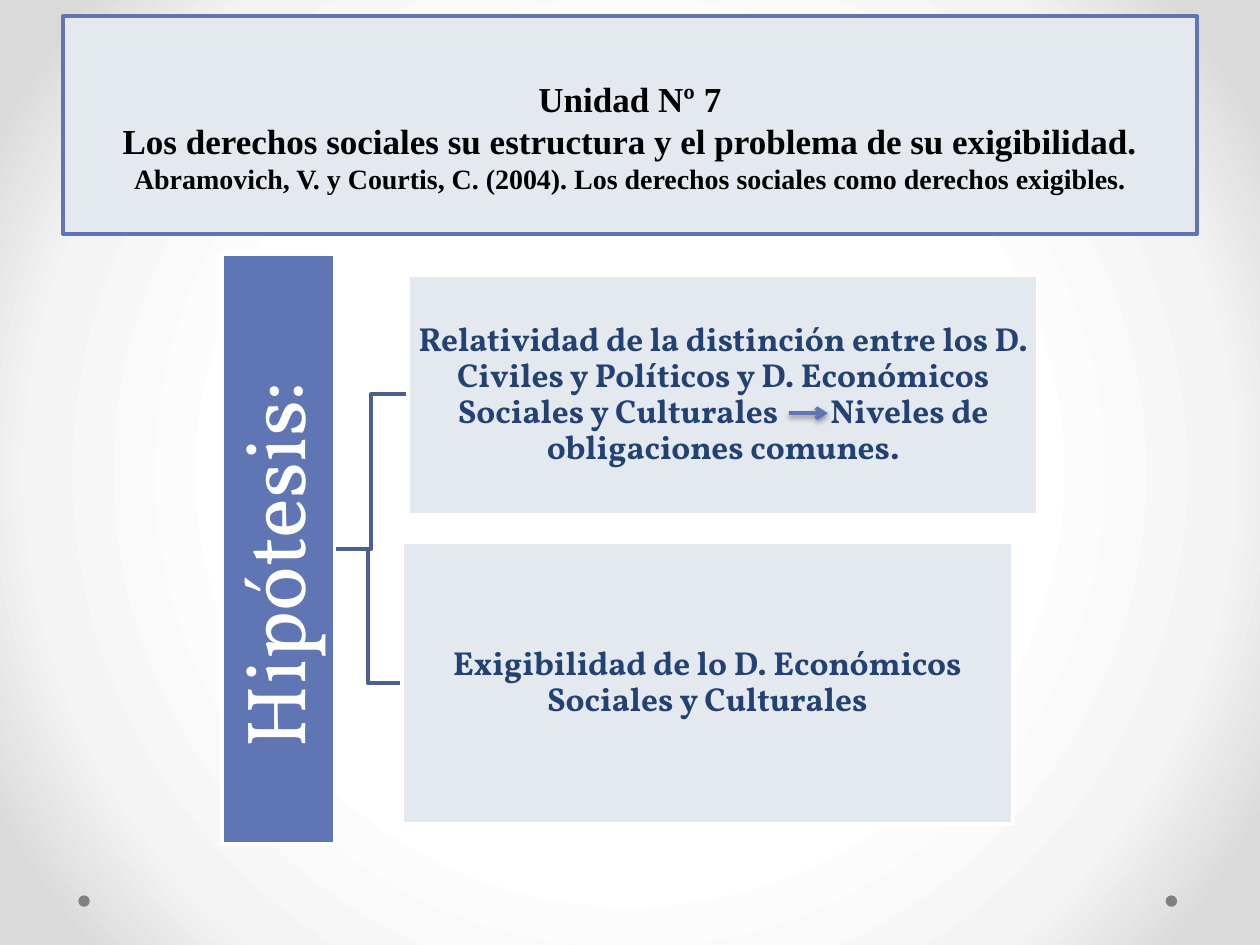
from pptx import Presentation
from pptx.dml.color import RGBColor
from pptx.enum.shapes import MSO_CONNECTOR, MSO_SHAPE as SHAPE
from pptx.enum.text import MSO_ANCHOR as ANCHOR, PP_ALIGN as ALIGN
from pptx.oxml import parse_xml
from pptx.oxml.ns import nsdecls, qn
from pptx.util import Cm, Pt

BLUE, PALE, NAVY, WHITE = "6076B4", "E4E9EF", "234271", "FFFFFF"


def color(value):
    return RGBColor.from_string(value)


def add_box(kind, place, fill, line=None):
    box = slide.shapes.add_shape(kind, *[Cm(length) for length in place])
    box.shadow.inherit = False
    box.fill.solid()
    box.fill.fore_color.rgb = color(fill)
    if line:
        box.line.color.rgb = color(line)
        box.line.width = Pt(2.25)
    else:
        box.line.fill.background()
    box.text_frame.word_wrap = True
    return box


prs = Presentation()
prs.slide_width, prs.slide_height = Cm(25.4), Cm(19.05)
slide = prs.slides.add_slide(prs.slide_layouts[6])

slide.background.fill.solid()
backdrop = slide.element.find(".//" + qn("p:bgPr"))
stops = "".join(
    f'<a:gs pos="{position * 1000}"><a:srgbClr val="{shade}"/></a:gs>'
    for position, shade in [(50, WHITE), (76, "F4F4F4"), (92, "DADADA")]
)
backdrop.replace(backdrop[0], parse_xml(
    f'<a:gradFill {nsdecls("a")} rotWithShape="1"><a:gsLst>{stops}</a:gsLst>'
    '<a:path path="circle"><a:fillToRect l="50000" t="50000" r="50000" b="50000"/></a:path>'
    '</a:gradFill>'
))

for dot_left in (1.58, 23.5):
    add_box(SHAPE.OVAL, (dot_left, 18.05, 0.23, 0.23), "808080")

heading = add_box(SHAPE.RECTANGLE, (1.27, 0.33, 22.86, 4.39), PALE, BLUE).text_frame
heading.vertical_anchor = ANCHOR.BOTTOM
heading.margin_bottom = Cm(0.78)
heading_lines = heading.paragraphs[0]
heading_lines.text = (
    "Unidad Nº 7\v"
    "Los derechos sociales su estructura y el problema de su exigibilidad.\v"
    "Abramovich, V. y Courtis, C. (2004). Los derechos sociales como derechos exigibles."
)
heading_lines.alignment = ALIGN.CENTER
for run, size in zip(heading_lines.runs, (20, 20, 16)):
    run.font.name = "Times New Roman"
    run.font.size = Pt(size)
    run.font.bold = True
    run.font.color.rgb = color("000000")

root_x, root_y = 6.73, 11.07
for branch_x, branch_y in [(8.1, 13.77), (8.23, 7.95)]:
    bend_x = (root_x + branch_x) / 2
    builder = slide.shapes.build_freeform(Cm(root_x), Cm(root_y))
    corners = [(bend_x, root_y), (bend_x, branch_y), (branch_x, branch_y)]
    builder.add_line_segments([(Cm(x), Cm(y)) for x, y in corners], close=False)
    bracket = builder.convert_to_shape()
    bracket.shadow.inherit = False
    bracket.fill.background()
    bracket.line.color.rgb = color("4D5E90")
    bracket.line.width = Pt(2.25)

hypothesis = add_box(SHAPE.RECTANGLE, (-0.33, 9.93, 11.89, 2.26), BLUE, WHITE)
hypothesis.rotation = 270
relativity = add_box(SHAPE.RECTANGLE, (8.23, 5.54, 12.7, 4.85), PALE, WHITE)
enforceability = add_box(SHAPE.RECTANGLE, (8.1, 10.92, 12.32, 5.69), PALE, WHITE)

relativity_parts = [
    "Relatividad de la distinción entre los D. Civiles y Políticos y "
    "D. Económicos Sociales y Culturales",
    " ",
    "Niveles de obligaciones comunes.",
]
for box, parts, size, bold, ink, inset in [
    (hypothesis, ["Hipótesis:"], 48, False, WHITE, 0.08),
    (relativity, relativity_parts, 19, True, NAVY, 0.03),
    (enforceability, ["Exigibilidad de lo D. Económicos Sociales y Culturales"], 19, True, NAVY, 0.03),
]:
    frame = box.text_frame
    frame.vertical_anchor = ANCHOR.MIDDLE
    frame.margin_left = frame.margin_right = Cm(inset)
    frame.margin_top = frame.margin_bottom = Cm(inset)
    paragraph = frame.paragraphs[0]
    paragraph.alignment = ALIGN.CENTER
    paragraph.line_spacing = 0.9
    for part in parts:
        run = paragraph.add_run()
        run.text = part
        run.font.name = "Vollkorn"
        run.font.size = Pt(size)
        run.font.bold = bold
        run.font.color.rgb = color(ink)

hypothesis.text_frame.margin_right = Cm(0.72)
arrow_gap = relativity.text_frame.paragraphs[0].runs[1]
arrow_gap.font._element.set("spc", "2600")

arrow = slide.shapes.add_connector(
    MSO_CONNECTOR.STRAIGHT, Cm(15.9), Cm(8.33), Cm(16.69), Cm(8.33)
)
arrow.line.color.rgb = color(BLUE)
arrow.line.width = Pt(2.25)
arrow.line._get_or_add_ln().append(parse_xml(f'<a:tailEnd {nsdecls("a")} type="arrow"/>'))
arrow._element.spPr.append(parse_xml(
    f'<a:effectLst {nsdecls("a")}>'
    f'<a:outerShdw blurRad="{Pt(3.1)}" dist="{Pt(1.6)}" dir="5400000" rotWithShape="0">'
    '<a:srgbClr val="000000"><a:alpha val="38000"/></a:srgbClr></a:outerShdw></a:effectLst>'
))

prs.save("out.pptx")
